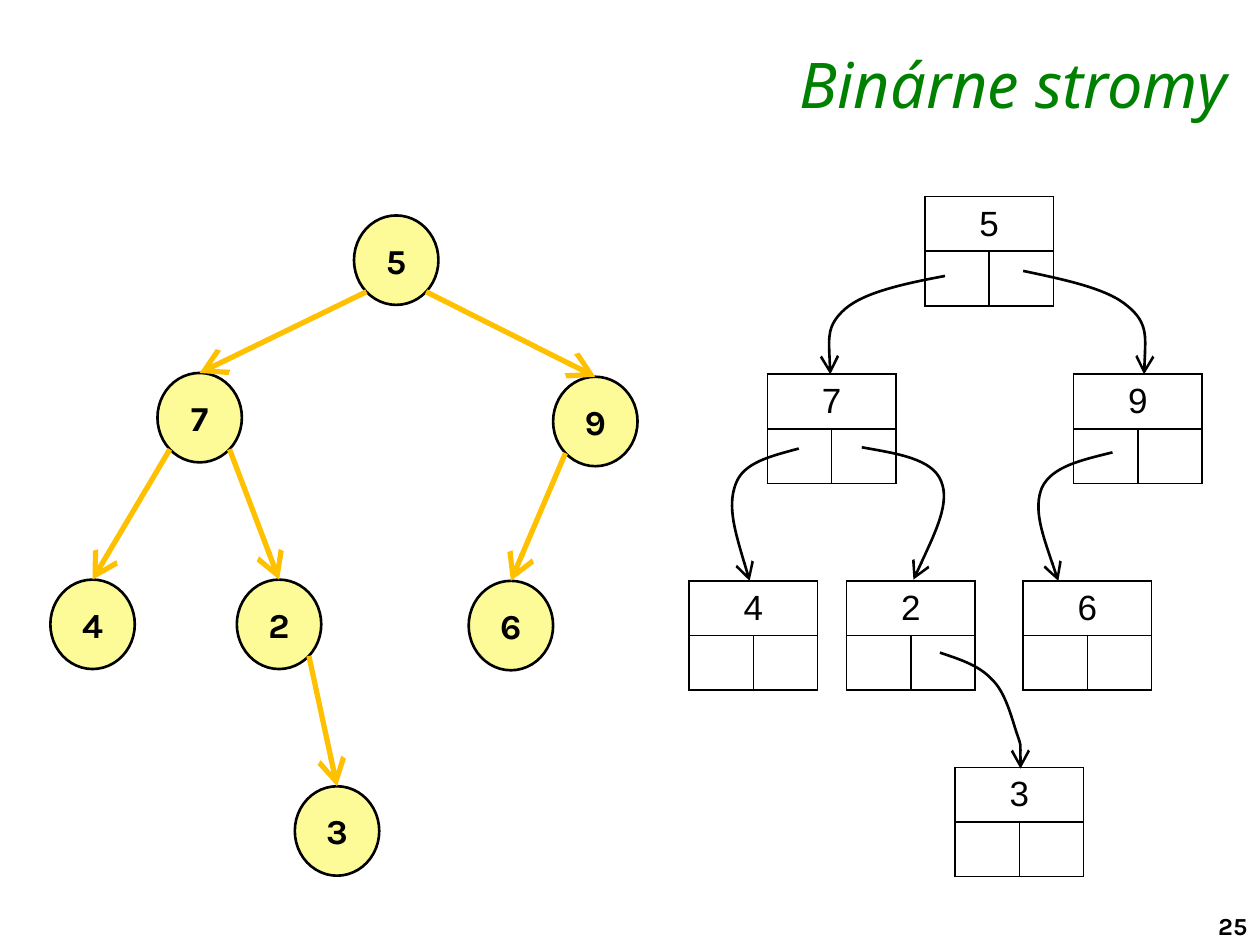
from lxml.etree import SubElement
from pptx import Presentation
from pptx.dml.color import RGBColor
from pptx.enum.shapes import MSO_CONNECTOR, MSO_SHAPE
from pptx.enum.text import MSO_ANCHOR, PP_ALIGN
from pptx.oxml.ns import qn
from pptx.util import Inches, Pt

TITLE = "Binárne stromy"
PAGE_NUMBER = "25"
BLACK, WHITE, GREEN, YELLOW, ORANGE = "000000", "FFFFFF", "008000", "FDFB97", "FFC000"

NODE_WIDTH, NODE_HEIGHT = 0.67, 0.71
NODES = {
    "5": (2.81, 1.71),
    "7": (1.25, 2.96),
    "9": (4.39, 2.99),
    "4": (0.4, 4.6),
    "2": (1.88, 4.6),
    "6": (3.72, 4.61),
    "3": (2.34, 6.24),
}
EDGES = [("7", "4"), ("9", "6"), ("2", "3"), ("5", "7"), ("5", "9"), ("7", "2")]

RECORD_WIDTH, RECORD_HEIGHT = 1.02, 0.8
RECORDS = {
    "5": (7.34, 1.56),
    "7": (6.09, 2.97),
    "9": (8.52, 2.97),
    "4": (5.47, 4.61),
    "2": (6.72, 4.61),
    "6": (8.12, 4.61),
    "3": (7.58, 6.09),
}
POINTERS = [
    [(8.12, 2.15), (8.45, 2.22), (8.79, 2.29), (8.95, 2.43), (9.11, 2.56), (9.09, 2.77), (9.08, 2.97)],
    [(6.34, 3.56), (6.12, 3.62), (5.9, 3.67), (5.84, 3.84), (5.77, 4.02), (5.86, 4.31), (5.95, 4.61)],
    [(6.84, 3.55), (7.12, 3.6), (7.4, 3.64), (7.47, 3.82), (7.54, 3.99), (7.39, 4.3), (7.25, 4.6)],
    [(7.46, 5.18), (7.61, 5.23), (7.77, 5.28), (7.87, 5.39), (7.98, 5.49), (8.03, 5.7), (8.07, 5.82),
     (8.11, 5.93), (8.1, 6.02), (8.1, 6.1)],
    [(7.5, 2.19), (7.18, 2.25), (6.86, 2.32), (6.71, 2.45), (6.56, 2.58), (6.58, 2.77), (6.59, 2.97)],
    [(8.83, 3.59), (8.59, 3.65), (8.35, 3.7), (8.27, 3.87), (8.2, 4.04), (8.3, 4.32), (8.4, 4.61)],
]


def color(value):
    return RGBColor.from_string(value)


def write(text_frame, text, size, font_name, font_color=BLACK, align=None, bold=False, italic=False):
    text_frame.text = text
    paragraph = text_frame.paragraphs[0]
    paragraph.alignment = align
    font = paragraph.runs[0].font
    font.size, font.name, font.bold, font.italic = Pt(size), font_name, bold, italic
    font.color.rgb = color(font_color)


def style_line(shape, line_color, width, arrow=False):
    shape.line.color.rgb = color(line_color)
    shape.line.width = Pt(width)
    if arrow:
        line = shape.line._get_or_add_ln()
        SubElement(line, qn("a:tailEnd"), type="arrow", w="lg", len="lg")


def add_node(slide, label, left, top):
    node = slide.shapes.add_shape(
        MSO_SHAPE.FLOWCHART_CONNECTOR, Inches(left), Inches(top), Inches(NODE_WIDTH), Inches(NODE_HEIGHT)
    )
    node.shadow.inherit = False
    node.fill.solid()
    node.fill.fore_color.rgb = color(YELLOW)
    style_line(node, BLACK, 1.5)
    node.text_frame.vertical_anchor = MSO_ANCHOR.MIDDLE
    write(node.text_frame, label, 20, "Karla", align=PP_ALIGN.CENTER, bold=True)
    return node


def add_edge(slide, nodes, parent, child):
    left, top = NODES[parent]
    side = -1 if NODES[child][0] < left else 1
    diagonal = 0.5 ** 0.5
    start_x = left + NODE_WIDTH / 2 * (1 + side * diagonal)
    start_y = top + NODE_HEIGHT / 2 * (1 + diagonal)
    edge = slide.shapes.add_connector(
        MSO_CONNECTOR.STRAIGHT, Inches(start_x), Inches(start_y), Inches(start_x), Inches(start_y)
    )
    edge.end_connect(nodes[child], 0)
    style_line(edge, ORANGE, 3, arrow=True)
    SubElement(edge._element.spPr, qn("a:effectLst"))


def add_borders(cell):
    properties = cell._tc.get_or_add_tcPr()
    for side in ("lnL", "lnR", "lnT", "lnB"):
        border = SubElement(properties, qn(f"a:{side}"), w=str(Pt(1)))
        fill = SubElement(border, qn("a:solidFill"))
        SubElement(fill, qn("a:srgbClr"), val=BLACK)


def add_record(slide, label, left, top):
    table = slide.shapes.add_table(
        2, 2, Inches(left), Inches(top), Inches(RECORD_WIDTH), Inches(RECORD_HEIGHT)
    ).table
    table.first_row = table.horz_banding = False
    for cell in table.iter_cells():
        add_borders(cell)
        cell.fill.solid()
        cell.fill.fore_color.rgb = color(WHITE)
    header = table.cell(0, 0)
    header.merge(table.cell(0, 1))
    header.vertical_anchor = MSO_ANCHOR.MIDDLE
    write(header.text_frame, label, 20, "Arial", align=PP_ALIGN.CENTER)
    for column in range(2):
        paragraph = table.cell(1, column).text_frame.paragraphs[0]
        SubElement(paragraph._p, qn("a:endParaRPr"), sz="2000")


def add_pointer(slide, points):
    start, *others = [(Inches(x), Inches(y)) for x, y in points]
    builder = slide.shapes.build_freeform(*start)
    builder.add_line_segments(others, close=False)
    pointer = builder.convert_to_shape()
    segments = list(pointer._element.iter(qn("a:lnTo")))
    outline = segments[0].getparent()
    for first in range(0, len(segments), 3):
        curve = SubElement(outline, qn("a:cubicBezTo"))
        for segment in segments[first:first + 3]:
            curve.append(segment[0])
            outline.remove(segment)
    pointer.shadow.inherit = False
    pointer.fill.background()
    style_line(pointer, BLACK, 1.5, arrow=True)


def main():
    presentation = Presentation()
    presentation.slide_width, presentation.slide_height = Inches(10), Inches(7.5)
    slide = presentation.slides.add_slide(presentation.slide_layouts[6])

    number = slide.shapes.add_textbox(Inches(9.57), Inches(7.18), Inches(0.51), Inches(0.33))
    write(number.text_frame, PAGE_NUMBER, 14, "Karla", bold=True)

    title = slide.shapes.add_textbox(Inches(2.29), Inches(0.31), Inches(7.55), Inches(0.58))
    title.text_frame.word_wrap = True
    write(title.text_frame, TITLE, 36, "Noto Sans", GREEN, PP_ALIGN.RIGHT, italic=True)

    nodes = {label: add_node(slide, label, *position) for label, position in NODES.items()}
    for parent, child in EDGES:
        add_edge(slide, nodes, parent, child)
    for label, position in RECORDS.items():
        add_record(slide, label, *position)
    for points in POINTERS:
        add_pointer(slide, points)

    presentation.save("out.pptx")


if __name__ == "__main__":
    main()
